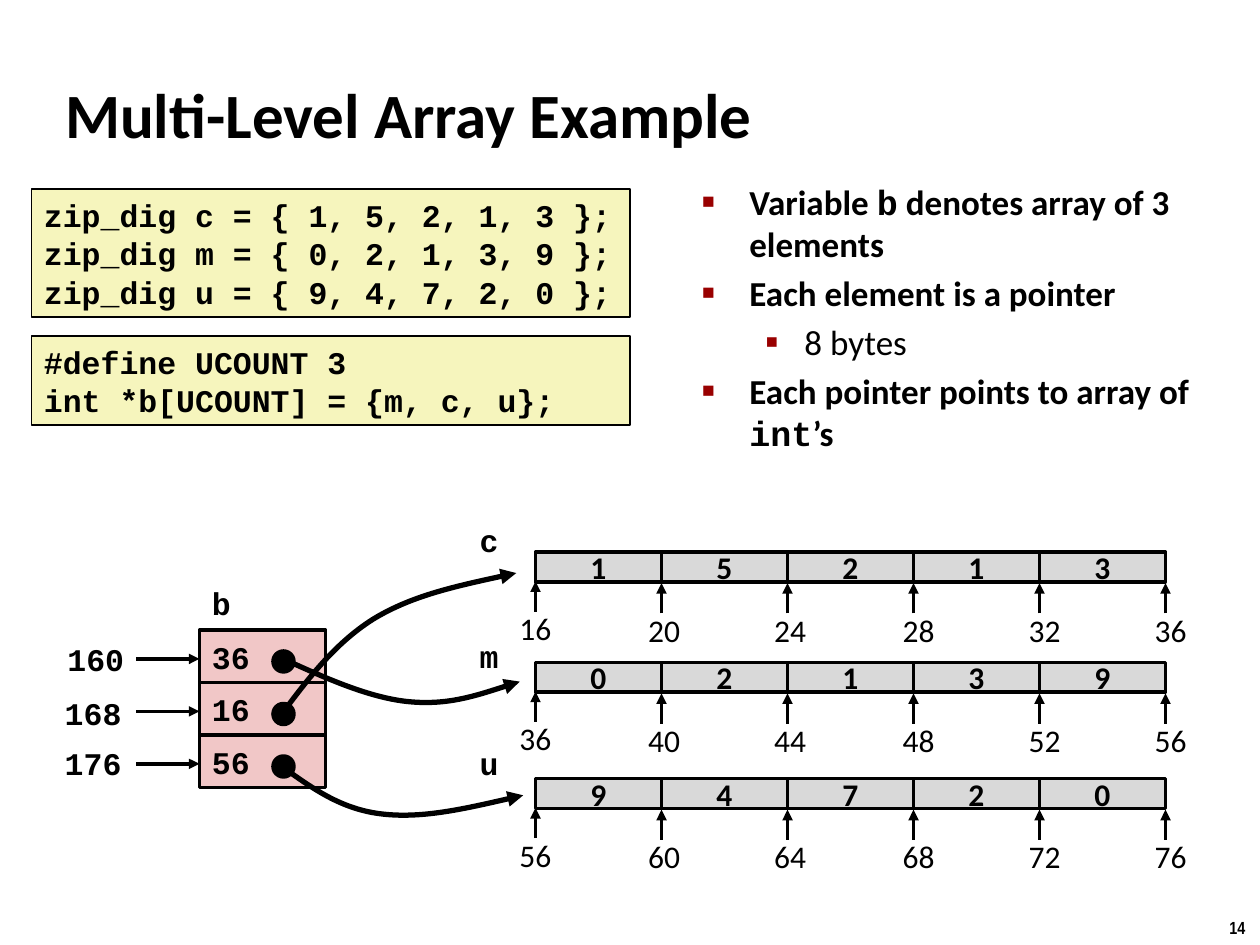
from lxml import etree
from pptx import Presentation
from pptx.dml.color import RGBColor
from pptx.enum.shapes import MSO_CONNECTOR, MSO_SHAPE
from pptx.enum.text import MSO_ANCHOR, MSO_AUTO_SIZE, PP_ALIGN
from pptx.oxml.ns import qn
from pptx.util import Pt

RECTANGLE, OVAL = MSO_SHAPE.RECTANGLE, MSO_SHAPE.OVAL
STRAIGHT = MSO_CONNECTOR.STRAIGHT
TOP, MIDDLE = MSO_ANCHOR.TOP, MSO_ANCHOR.MIDDLE
LEFT, CENTER, RIGHT = PP_ALIGN.LEFT, PP_ALIGN.CENTER, PP_ALIGN.RIGHT
FIXED = MSO_AUTO_SIZE.NONE

COLORS = {
    "ink": "000000",
    "code": "F6F5BD",
    "pointer": "F1C7C7",
    "digit": "D9D9D9",
    "bullet": "990000",
}
SANS, MONO, NARROW = "Calibri", "Courier New", "Arial Narrow"


def rgb(name):
    """Return the named colour."""
    return RGBColor.from_string(COLORS[name])


def write(paragraph, text, size=18, font=SANS, bold=True):
    """Add one formatted run to a paragraph."""
    run = paragraph.add_run()
    run.text = text
    run.font.size = Pt(size)
    run.font.name = font
    run.font.bold = bold
    run.font.color.rgb = rgb("ink")


class SlideBuilder:
    """Hold the current slide and draw its elements in one style."""

    def __init__(self, slide):
        self.slide = slide
        self.shapes = slide.shapes

    def place(self, shape, left, top, width, height):
        """Move and size a shape."""
        shape.left, shape.top = Pt(left), Pt(top)
        shape.width, shape.height = Pt(width), Pt(height)

    def fill_frame(self, frame, text, align=LEFT, anchor=TOP, wrap=True, **style):
        """Write each line of text as a paragraph of the frame."""
        frame.word_wrap = wrap
        frame.auto_size = FIXED
        frame.vertical_anchor = anchor
        for number, line in enumerate(text.split("\n")):
            paragraph = frame.add_paragraph() if number else frame.paragraphs[0]
            paragraph.alignment = align
            if style.get("font") == MONO:
                paragraph.line_spacing = Pt(22)
            write(paragraph, line, **style)

    def title(self, text, box):
        """Fill the title placeholder."""
        self.place(self.shapes.title, *box)
        self.fill_frame(self.shapes.title.text_frame, text, anchor=MIDDLE, size=36)

    def bullets(self, items, box):
        """Fill the body placeholder with (level, runs) items."""
        body = self.slide.placeholders[1]
        self.place(body, *box)
        frame = body.text_frame
        frame.auto_size = FIXED
        for number, (level, runs) in enumerate(items):
            paragraph = frame.add_paragraph() if number else frame.paragraphs[0]
            paragraph.level = level
            paragraph.space_before = Pt(4)
            margin, hanging, size, mark = [(27, 27, 60, "■"), (58.5, 22.5, 110, "▪")][level]
            properties = paragraph._p.get_or_add_pPr()
            properties.set("marL", str(Pt(margin)))
            properties.set("indent", str(-Pt(hanging)))
            color = etree.SubElement(properties, qn("a:buClr"))
            etree.SubElement(color, qn("a:srgbClr"), val=COLORS["bullet"])
            etree.SubElement(properties, qn("a:buSzPct"), val=str(size * 1000))
            etree.SubElement(properties, qn("a:buChar"), char=mark)
            for text, font in runs:
                write(paragraph, text, size=20, font=font, bold=level == 0)

    def label(self, text, box, **style):
        """Add a plain text box."""
        area = self.shapes.add_textbox(*map(Pt, box))
        self.fill_frame(area.text_frame, text, **style)

    def block(self, box, fill, text="", kind=RECTANGLE, weight=2, **style):
        """Add an outlined preset shape, with text if given."""
        shape = self.shapes.add_shape(kind, *map(Pt, box))
        shape.shadow.inherit = False
        shape.fill.solid()
        shape.fill.fore_color.rgb = rgb(fill)
        shape.line.color.rgb = rgb("ink")
        shape.line.width = Pt(weight)
        if text:
            self.fill_frame(shape.text_frame, text, **style)

    def point(self, line, weight):
        """Give a line its colour, weight and arrowhead."""
        line.line.color.rgb = rgb("ink")
        line.line.width = Pt(weight)
        outline = line._element.spPr.find(qn("a:ln"))
        etree.SubElement(outline, qn("a:tailEnd"), type="triangle")

    def arrow(self, *ends):
        """Add a straight arrow."""
        connector = self.shapes.add_connector(STRAIGHT, *map(Pt, ends))
        self.point(connector, 2)
        etree.SubElement(connector._element.spPr, qn("a:effectLst"))

    def curve(self, points):
        """Add a curved arrow from a start and triples of Bezier points."""
        start, *rest = [(Pt(x), Pt(y)) for x, y in points]
        builder = self.shapes.build_freeform(*start)
        builder.add_line_segments(rest, close=False)
        shape = builder.convert_to_shape()
        shape.shadow.inherit = False
        shape.fill.background()
        self.point(shape, 3)
        steps = list(shape._element.iter(qn("a:lnTo")))
        for first in range(0, len(steps), 3):
            bezier = etree.Element(qn("a:cubicBezTo"))
            steps[first].addprevious(bezier)
            for step in steps[first:first + 3]:
                bezier.append(step[0])
                step.getparent().remove(step)

    def digit_row(self, name, name_top, top, digits, address):
        """Draw one array with its name, digits and element addresses."""
        self.label(name, (267, name_top, 25, 29), font=MONO, align=RIGHT, wrap=False)
        for column, digit in enumerate(digits):
            self.block((306 + 72 * column, top, 72, 17), "digit", digit,
                       align=CENTER, anchor=MIDDLE)
        for column, shift in enumerate((0, 1.5, 1.5, 3, 3, 3)):
            edge = 306 + 72 * column
            width, lift = (78, 0) if column else (53, 1)
            self.label(str(address + 4 * column),
                       (edge + shift - width / 2, top + 30 - lift, width, 29),
                       align=CENTER, bold=False)
            self.arrow(edge, top + 35 - lift, edge, top + 17.7 - lift)


def main():
    """Build the slide and save it."""
    deck = Presentation()
    deck.slide_width, deck.slide_height = Pt(720), Pt(540)
    page = SlideBuilder(deck.slides.add_slide(deck.slide_layouts[1]))

    page.label("14", (695.5, 520.5, 24.5, 19.5), size=10, font=NARROW, wrap=False)
    page.title("Multi-Level Array Example", (30, 42, 560, 45))
    page.bullets([
        (0, [("Variable ", SANS), ("b", MONO), (" denotes array of 3 elements", SANS)]),
        (0, [("Each element is a pointer", SANS)]),
        (1, [("8 bytes", SANS)]),
        (0, [("Each pointer points to array of ", SANS), ("int", MONO), ("’s", SANS)]),
    ], (394, 99.5, 326, 180))

    digit_code = ("zip_dig c = { 1, 5, 2, 1, 3 };\n"
                  "zip_dig m = { 0, 2, 1, 3, 9 };\n"
                  "zip_dig u = { 9, 4, 7, 2, 0 };")
    pointer_code = "#define UCOUNT 3\nint *b[UCOUNT] = {m, c, u};"
    for code, top, height in ((digit_code, 108, 73), (pointer_code, 192, 51)):
        page.block((18, top, 342, height), "code", code, weight=1, font=MONO)

    page.label("b", (114, 330, 25, 29), font=MONO, align=RIGHT, wrap=False)
    pointers = [("160", 31, 361.5, "36"), ("168", 29.5, 392.5, "16"),
                ("176", 29.5, 421, "56")]
    for row, (address, left, label_top, target) in enumerate(pointers):
        top = 360 + 30 * row
        page.block((114, top, 72, 30), "pointer", target, font=MONO, anchor=MIDDLE)
        page.block((156, top + 12, 12, 12), "ink", kind=OVAL)
        page.arrow(78, top + 16.5, 114, top + 16.5)
        page.label(address, (left, label_top, 47, 29), font=MONO, align=RIGHT, wrap=False)

    page.digit_row("c", 294, 315.5, "15213", 16)
    page.digit_row("m", 360, 378.5, "02139", 36)
    page.digit_row("u", 421, 445, "94720", 56)

    page.curve([(161, 408), (176, 388), (191, 368), (213, 354),
                (235, 340.5), (265, 334), (295, 327.5)])
    page.curve([(163, 377), (187, 388), (212, 399), (234, 401),
                (256, 403), (277, 396), (297, 389.5)])
    page.curve([(161, 438), (178, 450), (194, 462), (217, 465),
                (240, 468), (269, 461.5), (299, 454.5)])
    deck.save("out.pptx")


if __name__ == "__main__":
    main()
